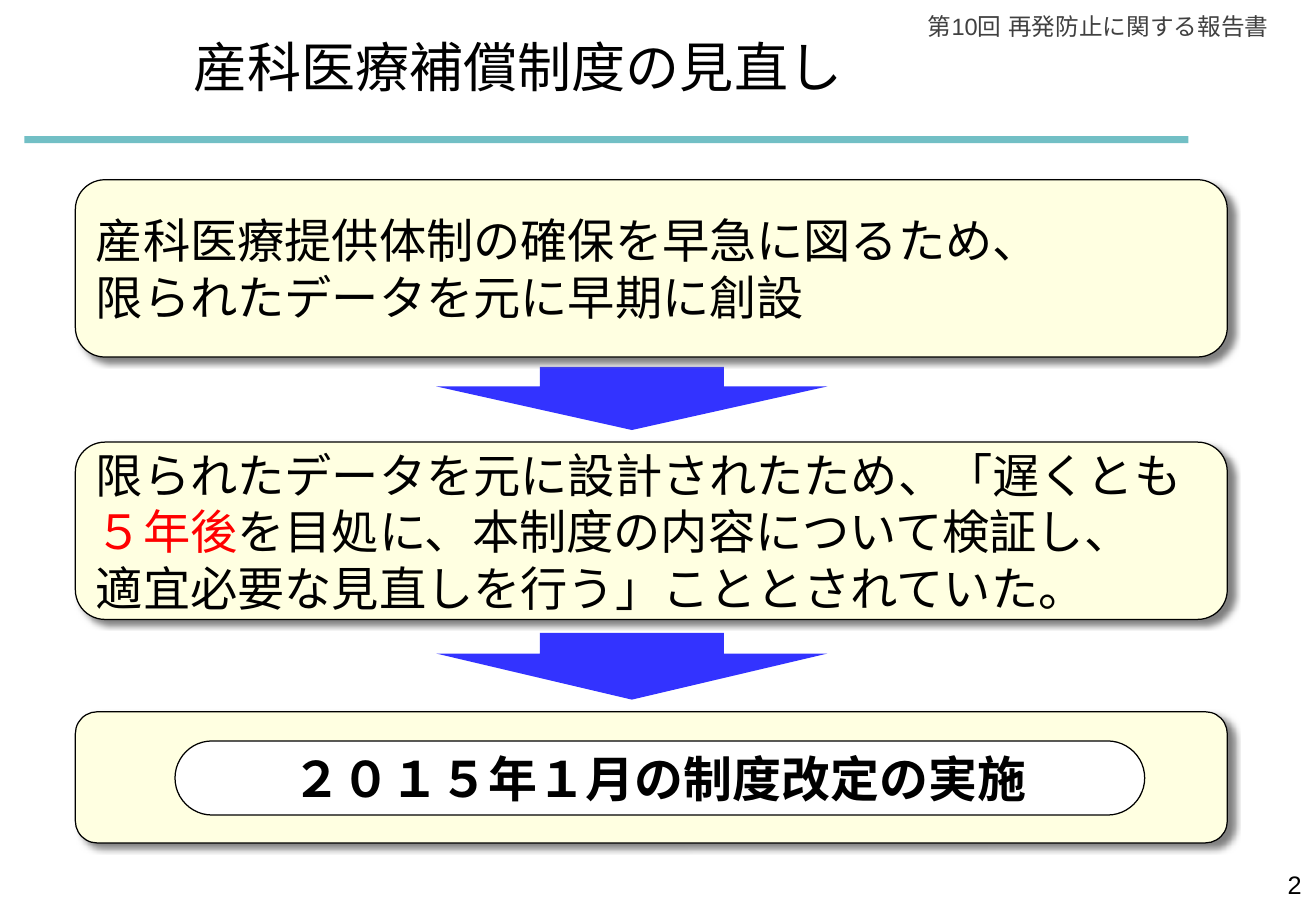
from dataclasses import dataclass
from typing import Optional

from lxml.etree import SubElement
from pptx import Presentation
from pptx.dml.color import RGBColor
from pptx.enum.shapes import MSO_SHAPE as Shape
from pptx.enum.text import MSO_ANCHOR as Anchor, PP_ALIGN as Align
from pptx.oxml.ns import qn
from pptx.util import Inches, Pt

COLORS = {
    "text": "000000", "header": "404040", "accent": "FF0000",
    "rule": "72BFC5", "panel": "FFFFE1", "pill": "FFFFFF",
    "arrow": "3333FF", "shadow": "808080",
}


@dataclass
class Span:
    text: str
    color: str = "text"


@dataclass
class Style:
    size: float
    font: str = "Arial"
    bold: bool = False
    align: Align = Align.LEFT
    leading: Optional[float] = None


@dataclass
class Panel:
    top: float
    height: float
    paras: list[list[Span]]


@dataclass
class Arrow:
    top: float
    height: float


PANEL_LEFT, PANEL_WIDTH = 0.62, 9.48
ARROW_CENTER, ARROW_WIDTH = 5.2, 3.22
BODY = Style(28, leading=33.5)

PANELS = [
    Panel(1.48, 1.46, [
        [Span("産科医療提供体制の確保を早急に図るため、")],
        [Span("限られたデータを元に早期に創設")],
    ]),
    Panel(3.64, 1.46, [
        [Span("限られたデータを元に設計されたため、「遅くとも"),
         Span("５年後", "accent"),
         Span("を目処に、本制度の内容について検証し、")],
        [Span("適宜必要な見直しを行う」こととされていた。")],
    ]),
    Panel(5.86, 1.08, []),
]
ARROWS = [Arrow(3.02, 0.52), Arrow(5.21, 0.55)]


def rgb(name: str) -> RGBColor:
    return RGBColor.from_string(COLORS[name])


def write(frame, paras: list[list[Span]], style: Style) -> None:
    frame.word_wrap = True
    for index, spans in enumerate(paras):
        para = frame.add_paragraph() if index else frame.paragraphs[0]
        para.alignment = style.align
        if style.leading:
            para.line_spacing = Pt(style.leading)
        for span in spans:
            run = para.add_run()
            run.text = span.text
            run.font.size = Pt(style.size)
            run.font.bold = style.bold
            run.font.name = style.font
            run.font.color.rgb = rgb(span.color)
            # East Asian typeface
            SubElement(run.font._element, qn("a:ea"), typeface=style.font)


def add_block(slide, kind: Shape, left: float, top: float, width: float,
              height: float, fill: str, outlined: bool = False):
    block = slide.shapes.add_shape(
        kind, Inches(left), Inches(top), Inches(width), Inches(height))
    block.shadow.inherit = False
    block.fill.solid()
    block.fill.fore_color.rgb = rgb(fill)
    if outlined:
        block.line.color.rgb = rgb("text")
        block.line.width = Pt(0.75)
    else:
        block.line.fill.background()
    block.text_frame.vertical_anchor = Anchor.MIDDLE
    return block


def add_shadow(block) -> None:
    effects = block._element.spPr.find(qn("a:effectLst"))
    shadow = SubElement(
        effects, qn("a:outerShdw"), blurRad=str(Pt(4)), dist=str(Pt(4)),
        dir=str(36 * 60000), algn="ctr", rotWithShape="0")
    SubElement(shadow, qn("a:srgbClr"), val=COLORS["shadow"])


def add_label(slide, left: float, top: float, width: float, height: float,
              span: Span, style: Style) -> None:
    label = slide.shapes.add_textbox(
        Inches(left), Inches(top), Inches(width), Inches(height))
    write(label.text_frame, [[span]], style)


def add_title(slide, text: str) -> None:
    title = slide.shapes.title
    title.left, title.top = Inches(1.36), Inches(0.28)
    title.width, title.height = Inches(5.81), Inches(0.93)
    frame = title.text_frame
    frame.vertical_anchor = Anchor.TOP
    frame.margin_top = frame.margin_bottom = 0
    write(frame, [[Span(text)]],
          Style(32, "Noto Sans CJK JP", align=Align.CENTER))


def add_panel(slide, panel: Panel) -> None:
    block = add_block(slide, Shape.ROUNDED_RECTANGLE, PANEL_LEFT, panel.top,
                      PANEL_WIDTH, panel.height, "panel", outlined=True)
    add_shadow(block)
    write(block.text_frame, panel.paras, BODY)


def add_arrow(slide, arrow: Arrow) -> None:
    # A right arrow turned to point down about its own centre
    left = ARROW_CENTER - arrow.height / 2
    top = arrow.top + (arrow.height - ARROW_WIDTH) / 2
    block = add_block(slide, Shape.RIGHT_ARROW, left, top,
                      arrow.height, ARROW_WIDTH, "arrow")
    block.rotation = 90
    block.adjustments[0] = 0.47
    block.adjustments[1] = 0.69


def main() -> None:
    deck = Presentation()
    deck.slide_width, deck.slide_height = Inches(10.83), Inches(7.5)
    page = deck.slides.add_slide(deck.slide_layouts[5])

    # Header and title
    add_block(page, Shape.RECTANGLE, 0.2, 1.12, 9.58, 0.06, "rule")
    add_label(page, 7.38, 0.05, 3.16, 0.34,
              Span("第10回 再発防止に関する報告書", "header"),
              Style(14, align=Align.RIGHT))
    add_title(page, "産科医療補償制度の見直し")

    # Steps from launch to revision
    for arrow in ARROWS:
        add_arrow(page, arrow)
    for panel in PANELS:
        add_panel(page, panel)

    # Outcome inside the last panel
    pill = add_block(page, Shape.ROUNDED_RECTANGLE, 1.44, 6.1, 7.98, 0.61,
                     "pill", outlined=True)
    pill.adjustments[0] = 0.5
    write(pill.text_frame, [[Span("２０１５年１月の制度改定の実施")]],
          Style(29, bold=True, align=Align.CENTER))

    # Page number
    add_label(page, 8.28, 7.11, 2.53, 0.39, Span("2"),
              Style(15, align=Align.RIGHT))

    deck.save("out.pptx")


if __name__ == "__main__":
    main()
